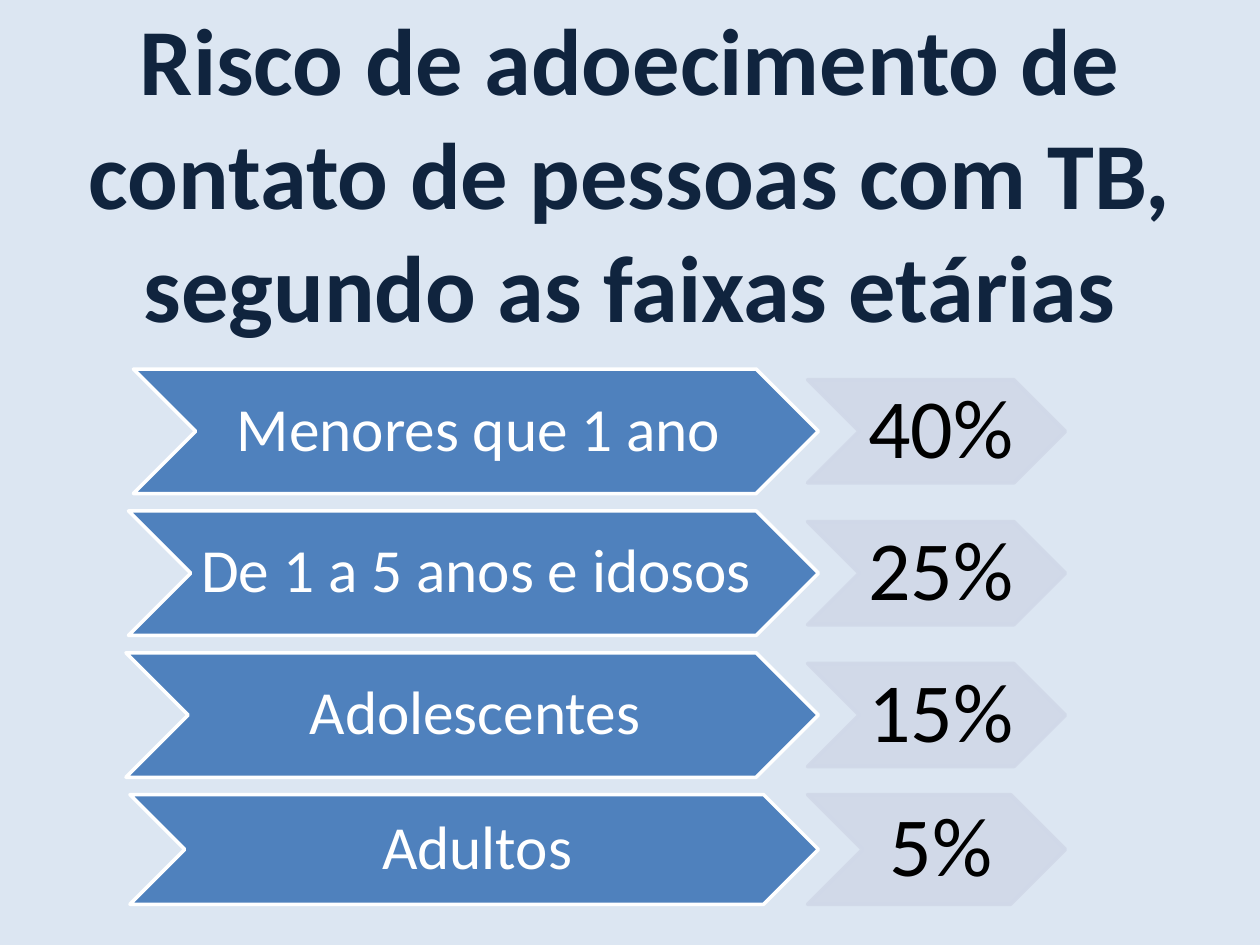
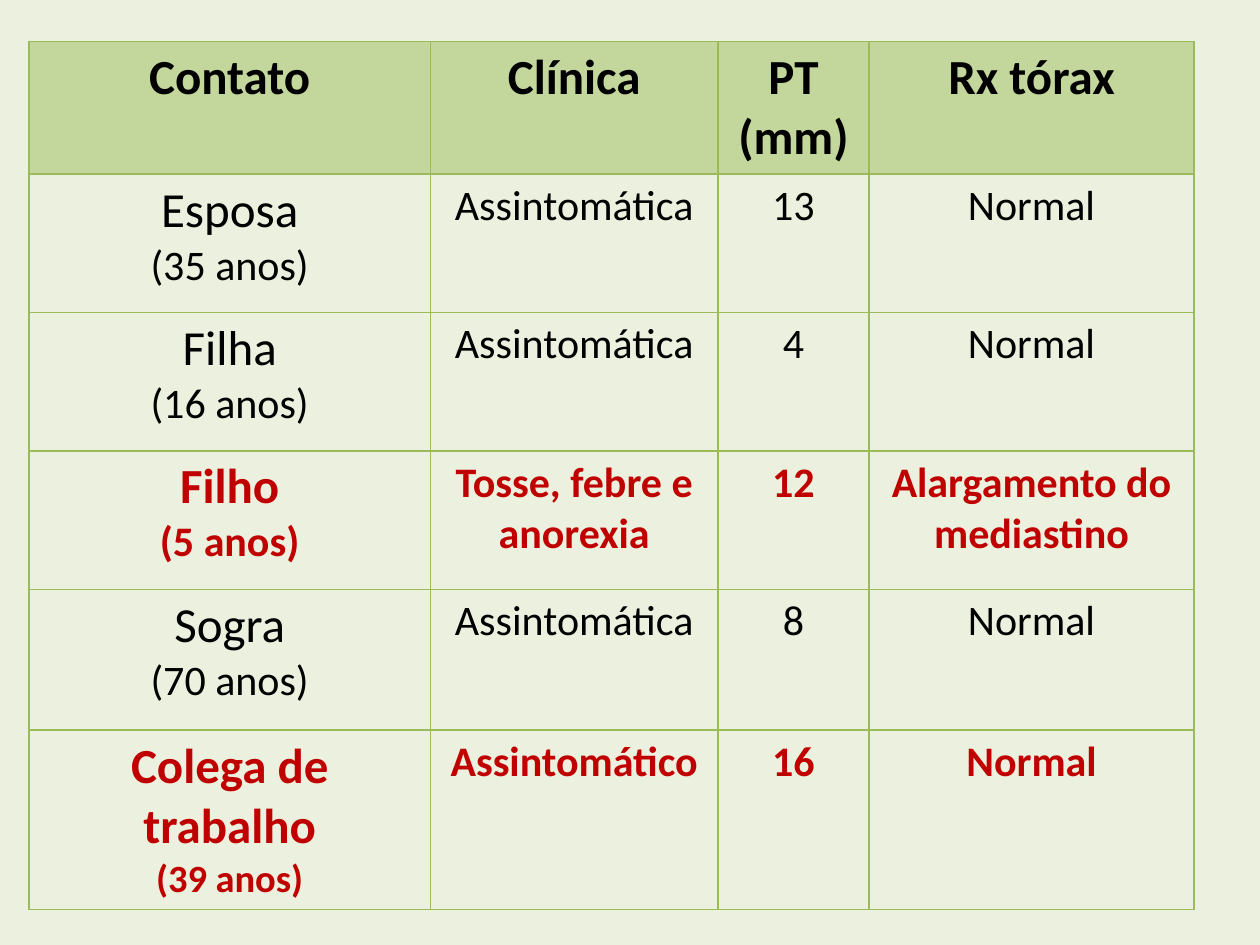
from dataclasses import dataclass

from lxml import etree
from pptx import Presentation
from pptx.dml.color import RGBColor
from pptx.enum.shapes import MSO_SHAPE
from pptx.enum.text import MSO_ANCHOR, MSO_AUTO_SIZE, PP_ALIGN
from pptx.oxml.ns import qn
from pptx.util import Cm, Pt

CHEVRON = MSO_SHAPE.CHEVRON
MIDDLE = MSO_ANCHOR.MIDDLE
CENTER = PP_ALIGN.CENTER
NO_AUTOFIT = MSO_AUTO_SIZE.NONE


@dataclass(frozen=True)
class Theme:
    font: str = "Calibri"
    blue_page: str = "DCE6F2"
    green_page: str = "EBF1DE"
    navy: str = "10243E"
    blue: str = "4F81BD"
    pale_blue: str = "D0D8E8"
    header_green: str = "C3D69B"
    border_green: str = "9BBB59"
    red: str = "C00000"
    white: str = "FFFFFF"
    black: str = "000000"
    title_size: int = 54
    percent_size: int = 48
    label_size: int = 35
    head_size: int = 28
    body_size: int = 24
    small_size: int = 22
    outline: int = 2
    border: float = 0.96


theme = Theme()


def format_para(para, size, color, bold=False):
    para.alignment = CENTER
    for span in para.runs:
        span.font.name = theme.font
        span.font.size = Pt(size)
        span.font.bold = bold
        span.font.color.rgb = RGBColor.from_string(color)


def add_chevron(page, left, top, width, height, text, size, colors, inset, alpha=None):
    fill_color, line_color, text_color = colors
    box = page.shapes.add_shape(CHEVRON, Cm(left), Cm(top), Cm(width), Cm(height))
    box.adjustments[0] = 0.5
    box.shadow.inherit = False
    box.fill.solid()
    box.fill.fore_color.rgb = RGBColor.from_string(fill_color)
    box.line.color.rgb = RGBColor.from_string(line_color)
    box.line.width = Pt(theme.outline)
    if alpha:
        for color in box._element.spPr.iter(qn("a:srgbClr")):
            etree.SubElement(color, qn("a:alpha"), val=str(alpha * 1000))
    frame = box.text_frame
    frame.word_wrap = True
    frame.vertical_anchor = MIDDLE
    frame.margin_left, frame.margin_right = Cm(inset), 0
    frame.margin_top = frame.margin_bottom = Cm(inset / 2)
    frame.text = text
    frame.paragraphs[0].line_spacing = 0.9
    format_para(frame.paragraphs[0], size, text_color)


deck = Presentation()
deck.slide_width, deck.slide_height = Cm(25.4), Cm(19.05)
title_only, blank = deck.slide_layouts[5], deck.slide_layouts[6]
pages = []
for layout, color in ((title_only, theme.blue_page), (blank, theme.green_page)):
    page = deck.slides.add_slide(layout)
    page.background.fill.solid()
    page.background.fill.fore_color.rgb = RGBColor.from_string(color)
    pages.append(page)
risk_page, contacts_page = pages

# Slide 1: title
title = risk_page.shapes.title
title.left, title.top, title.width, title.height = Cm(0.7), Cm(1.37), Cm(24), Cm(4.17)
frame = title.text_frame
frame.text = "Risco de adoecimento de contato de pessoas com TB, segundo as faixas etárias"
frame.word_wrap = True
frame.auto_size = NO_AUTOFIT
frame.vertical_anchor = MIDDLE
format_para(frame.paragraphs[0], theme.title_size, theme.navy, bold=True)

# Slide 1: one bar and one percentage per age group
first_top, pitch = 7.44, 2.86
bar_right = 16.5
percent_left, percent_width = 16.28, 5.2
bar_colors = (theme.blue, theme.white, theme.white)
percent_colors = (theme.pale_blue, theme.pale_blue, theme.black)
# label, percentage, bar left, bar height, percentage height
risks = [
    ("Menores que 1 ano", "40%", 2.69, 2.51, 2.08),
    ("De 1 a 5 anos e idosos", "25%", 2.59, 2.51, 2.08),
    ("Adolescentes", "15%", 2.54, 2.51, 2.08),
    ("Adultos", "5%", 2.62, 2.21, 2.21),
]
for index, (label, percent, left, bar_height, percent_height) in enumerate(risks):
    top = first_top + index * pitch
    percent_top = top + (bar_height - percent_height) / 2
    add_chevron(risk_page, left, top, bar_right - left, bar_height,
                label, theme.label_size, bar_colors, 0.12)
    add_chevron(risk_page, percent_left, percent_top, percent_width, percent_height,
                percent, theme.percent_size, percent_colors, 0.18, alpha=90)

# Slide 2: table of contacts
header = ["Contato", "Clínica", "PT (mm)", "Rx tórax"]
contacts = [
    ["Esposa\n(35 anos)", "Assintomática", "13", "Normal"],
    ["Filha\n(16 anos)", "Assintomática", "4", "Normal"],
    ["Filho\n(5 anos)", "Tosse, febre e anorexia", "12", "Alargamento do mediastino"],
    ["Sogra\n(70 anos)", "Assintomática", "8", "Normal"],
    ["Colega de trabalho\n(39 anos)", "Assintomático", "16", "Normal"],
]
highlighted = ("Filho", "Colega")
widths = [8.1, 5.79, 3.05, 6.55]
heights = [2.67, 2.79, 2.79, 2.79, 2.84, 3.61]
rows = [header] + contacts

table = contacts_page.shapes.add_table(
    len(rows), len(header), Cm(0.58), Cm(0.84), Cm(sum(widths)), Cm(sum(heights))).table
table.first_row = False
table.horz_banding = False
for column, width in zip(table.columns, widths):
    column.width = Cm(width)
for row, height in zip(table.rows, heights):
    row.height = Cm(height)

for row_index, texts in enumerate(rows):
    is_header = row_index == 0
    is_highlighted = texts[0].startswith(highlighted)
    color = theme.red if is_highlighted else theme.black
    for column_index, text in enumerate(texts):
        cell = table.cell(row_index, column_index)
        cell.text_frame.text = text
        for para_index, para in enumerate(cell.text_frame.paragraphs):
            size = theme.body_size
            if is_header or (column_index == 0 and para_index == 0):
                size = theme.head_size
            elif para.text == "(39 anos)":
                size = theme.small_size
            format_para(para, size, color, bold=is_header or is_highlighted)

        # Borders come before the fill in the cell properties
        properties = cell._tc.get_or_add_tcPr()
        for side in ("a:lnL", "a:lnR", "a:lnT", "a:lnB"):
            line = etree.SubElement(properties, qn(side), w=str(Pt(theme.border)))
            solid = etree.SubElement(line, qn("a:solidFill"))
            etree.SubElement(solid, qn("a:srgbClr"), val=theme.border_green)
        if is_header:
            cell.fill.solid()
            cell.fill.fore_color.rgb = RGBColor.from_string(theme.header_green)
        else:
            cell.fill.background()

deck.save("out.pptx")
